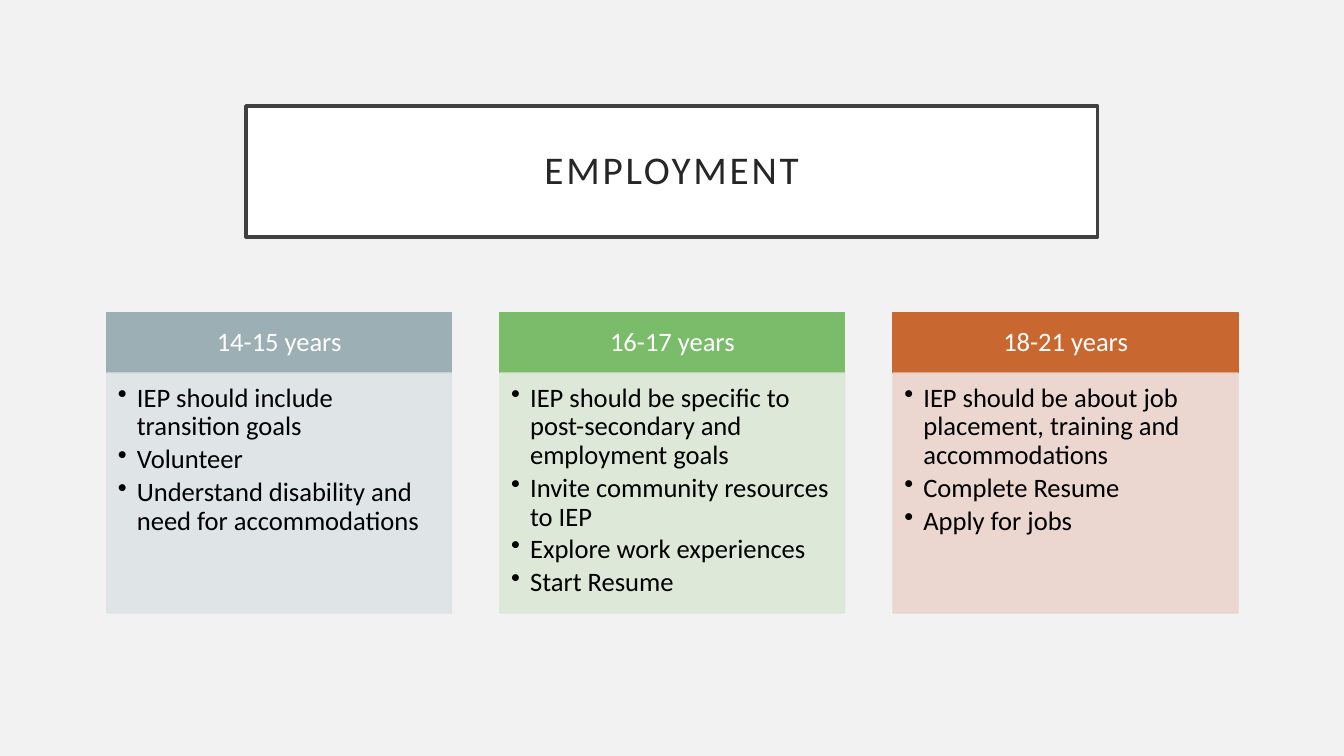
from lxml.etree import SubElement
from pptx import Presentation
from pptx.dml.color import RGBColor
from pptx.enum.shapes import MSO_SHAPE
from pptx.enum.text import MSO_ANCHOR, PP_ALIGN
from pptx.oxml.ns import qn
from pptx.util import Cm, Pt

COLORS = {
    "background": "F2F2F2", "white": "FFFFFF", "black": "000000",
    "title_text": "262626", "title_border": "404040",
    "gray": "9BAFB5", "gray_tint": "DEE3E5",
    "green": "7ABC69", "green_tint": "DBE8D6",
    "orange": "C96731", "orange_tint": "EBD3CD",
}

AGE_GROUPS = [
    ("14-15 years", "gray", [
        "IEP should include transition goals",
        "Volunteer",
        "Understand disability and need for accommodations",
    ]),
    ("16-17 years", "green", [
        "IEP should be specific to post-secondary and employment goals",
        "Invite community resources to IEP",
        "Explore work experiences",
        "Start Resume",
    ]),
    ("18-21 years", "orange", [
        "IEP should be about job placement, training and accommodations",
        "Complete Resume",
        "Apply for jobs",
    ]),
]

COLUMN_LEFT, COLUMN_TOP, COLUMN_WIDTH, COLUMN_PITCH = 2.69, 7.87, 8.69, 9.91
HEADER_HEIGHT, BODY_HEIGHT = 1.53, 6.05


def apply_format(target, values):
    for name, value in values.items():
        setattr(target, name, value)


class SlideBuilder:
    font_name = "Calibri"
    line_spacing = 0.9

    def __init__(self, slide):
        self.slide = slide
        slide.background.fill.solid()
        slide.background.fill.fore_color.rgb = self.color("background")

    def color(self, name):
        return RGBColor.from_string(COLORS[name])

    def box(self, bounds, fill, border, border_width, margins, anchor):
        """Add a filled rectangle; margins run left, top, right, bottom in cm."""
        panel = self.slide.shapes.add_shape(
            MSO_SHAPE.RECTANGLE, *(Cm(length) for length in bounds))
        panel.shadow.inherit = False
        panel.fill.solid()
        panel.fill.fore_color.rgb = self.color(fill)
        panel.line.color.rgb = self.color(border)
        panel.line.width = Pt(border_width)
        sides = ("margin_left", "margin_top", "margin_right", "margin_bottom")
        apply_format(panel.text_frame, {
            "word_wrap": True, "vertical_anchor": anchor,
            **{side: Cm(margin) for side, margin in zip(sides, margins)}})
        return panel

    def add_text(self, paragraph, text, size, color, **layout):
        apply_format(paragraph, {"line_spacing": self.line_spacing, **layout})
        run = paragraph.add_run()
        run.text = text
        apply_format(run.font, {"name": self.font_name, "size": Pt(size)})
        run.font.color.rgb = self.color(color)
        return run

    def title(self, text, bounds):
        banner = self.box(bounds, "white", "title_border", 2.5,
                          [0.51] * 4, MSO_ANCHOR.MIDDLE)
        heading = self.add_text(banner.text_frame.paragraphs[0], text, 28,
                                "title_text", alignment=PP_ALIGN.CENTER)
        heading._r.get_or_add_rPr().set("spc", "200")

    def header(self, text, bounds, color):
        band = self.box(bounds, color, color, 1,
                        (0.38, 0.2, 0.38, 0.2), MSO_ANCHOR.MIDDLE)
        self.add_text(band.text_frame.paragraphs[0], text, 19, "white",
                      alignment=PP_ALIGN.CENTER)

    def bullet_panel(self, goals, bounds, color):
        panel = self.box(bounds, color, color, 1,
                         (0.28, 0.28, 0.38, 0.43), MSO_ANCHOR.TOP)
        for tint in panel._element.spPr.iter(qn("a:srgbClr")):
            SubElement(tint, qn("a:alpha"), val="90000")
        frame = panel.text_frame
        for index, goal in enumerate(goals):
            paragraph = frame.add_paragraph() if index else frame.paragraphs[0]
            self.add_text(paragraph, goal, 19, "black", level=1,
                          alignment=PP_ALIGN.LEFT, space_after=Pt(2.85))
            properties = paragraph._p.get_or_add_pPr()
            properties.set("marL", str(Cm(0.48)))
            properties.set("indent", str(-Cm(0.48)))
            SubElement(properties, qn("a:buChar"), char="•")


def main():
    deck = Presentation()
    apply_format(deck, {"slide_width": Cm(33.87), "slide_height": Cm(19.05)})
    builder = SlideBuilder(deck.slides.add_slide(deck.slide_layouts[6]))
    builder.title("EMPLOYMENT", (6.2, 2.67, 21.46, 3.3))
    for column, (ages, color, goals) in enumerate(AGE_GROUPS):
        left = COLUMN_LEFT + column * COLUMN_PITCH
        builder.header(
            ages, (left, COLUMN_TOP, COLUMN_WIDTH, HEADER_HEIGHT), color)
        builder.bullet_panel(
            goals, (left, COLUMN_TOP + HEADER_HEIGHT, COLUMN_WIDTH, BODY_HEIGHT),
            f"{color}_tint")
    deck.save("out.pptx")


if __name__ == "__main__":
    main()
